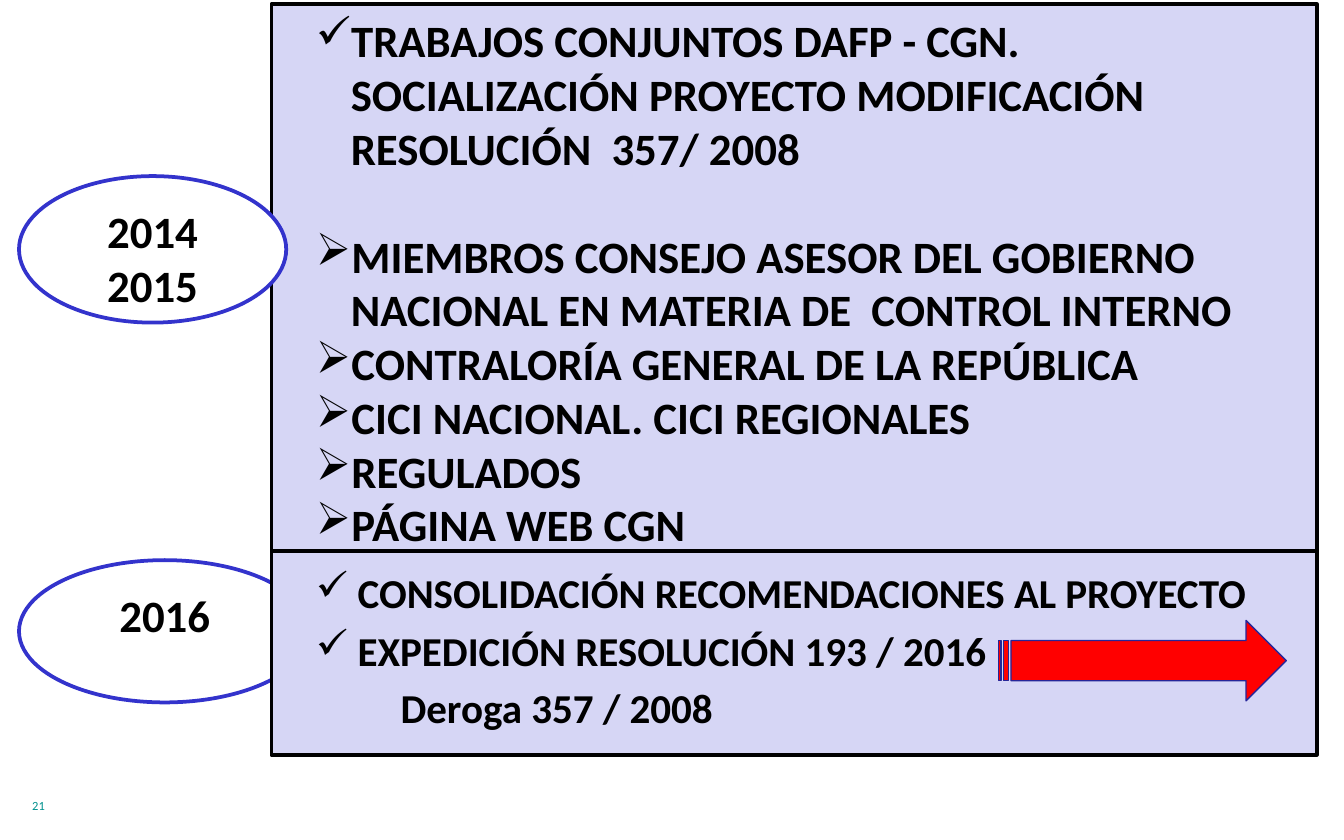
"""Build the 2014-2016 timeline slide of the resolution project."""
from lxml import etree
from pptx import Presentation
from pptx.dml.color import RGBColor
from pptx.enum.shapes import MSO_SHAPE
from pptx.enum.text import MSO_ANCHOR, PP_ALIGN
from pptx.oxml.ns import qn
from pptx.util import Cm, Pt

RECTANGLE, ELLIPSE = MSO_SHAPE.RECTANGLE, MSO_SHAPE.OVAL
STRIPED_ARROW = MSO_SHAPE.STRIPED_RIGHT_ARROW
TOP, MIDDLE = MSO_ANCHOR.TOP, MSO_ANCHOR.MIDDLE
LEFT, CENTER = PP_ALIGN.LEFT, PP_ALIGN.CENTER

FONT = "Calibri"
COLORS = {
    "panel": "D6D6F5", "ink": "000000", "white": "FFFFFF", "ring": "3333CC",
    "arrow": "FF0000", "arrow_edge": "262699", "number": "00918E",
}
CHECK, POINTER = "✓", "➢"


def add_block(kind, box, fill, edge, weight):
    block = slide.shapes.add_shape(kind, *[Cm(v) for v in box])
    block.shadow.inherit = False
    block.fill.solid()
    block.fill.fore_color.rgb = RGBColor.from_string(COLORS[fill])
    block.line.color.rgb = RGBColor.from_string(COLORS[edge])
    block.line.width = Pt(weight)
    return block


def write_line(frame, index, text, size, align, bullet=None, margin=0, color="ink", bold=True):
    line = frame.paragraphs[0] if index == 0 else frame.add_paragraph()
    line.text = text
    line.alignment = align
    properties = line._p.get_or_add_pPr()
    properties.set("marL", str(Cm(margin)))
    properties.set("indent", str(-Cm(margin) if bullet else 0))
    if bullet:
        etree.SubElement(properties, qn("a:buChar")).set("char", bullet)
    for run in line.runs:
        run.font.name = FONT
        run.font.size = Pt(size)
        run.font.bold = bold
        run.font.color.rgb = RGBColor.from_string(COLORS[color])
    return line


prs = Presentation()
prs.slide_width, prs.slide_height = Cm(25.4), Cm(15.88)
slide = prs.slides.add_slide(prs.slide_layouts[6])

page_number = slide.shapes.add_textbox(Cm(0.36), Cm(14.96), Cm(5.28), Cm(0.76)).text_frame
page_number.word_wrap = True
write_line(page_number, 0, "21", 6.7, LEFT, color="number", bold=False)

socialization = [
    (CHECK, "TRABAJOS CONJUNTOS DAFP - CGN. SOCIALIZACIÓN PROYECTO MODIFICACIÓN "
            "RESOLUCIÓN  357/ 2008", 0.66, 0),
    (POINTER, "MIEMBROS CONSEJO ASESOR DEL GOBIERNO NACIONAL EN MATERIA DE  CONTROL INTERNO",
     0.66, 29),
    (POINTER, "CONTRALORÍA GENERAL DE LA REPÚBLICA", 0.66, 0),
    (POINTER, "CICI NACIONAL. CICI REGIONALES", 0.66, 0),
    (POINTER, "REGULADOS", 0.66, 0),
    (POINTER, "PÁGINA WEB CGN", 0.66, 0),
]
issue = [
    (CHECK, "CONSOLIDACIÓN RECOMENDACIONES AL PROYECTO", 0.79, 0),
    (CHECK, "EXPEDICIÓN RESOLUCIÓN 193 / 2016", 0.79, 7),
    (None, "Deroga 357 / 2008", 1.6, 7),
]
stages = [
    (0.08, 10.5, socialization, 24, 1.0, ["2014", "2015"], (0.36, 3.33, 5.05, 2.77)),
    (10.42, 3.85, issue, 22, 0.9, ["2016"], (0.36, 10.59, 5.51, 2.69)),
]

for stage, (top, height, items, size, spacing, years, ring) in enumerate(stages):
    blocks = [
        ("panel", RECTANGLE, (5.13, top, 19.76, height), "panel", "ink"),
        ("years", ELLIPSE, ring, "white", "ring"),
    ]
    if stage == 1:
        blocks.reverse()
    for role, kind, box, fill, edge in blocks:
        frame = add_block(kind, box, fill, edge, 2).text_frame
        frame.word_wrap = True
        if role == "years":
            frame.vertical_anchor = TOP
            for index, year in enumerate(years):
                write_line(frame, index, year, 24, CENTER)
            continue
        frame.vertical_anchor = MIDDLE
        frame.margin_left = Cm(0.84)
        frame.margin_top = frame.margin_right = frame.margin_bottom = Cm(0.1)
        for index, (bullet, text, margin, gap) in enumerate(items):
            line = write_line(frame, index, text, size, LEFT, bullet, margin)
            line.line_spacing = spacing
            line.space_before = Pt(gap)

add_block(STRIPED_ARROW, (18.87, 11.73, 5.44, 1.52), "arrow", "arrow_edge", 0.75)

prs.save("out.pptx")
